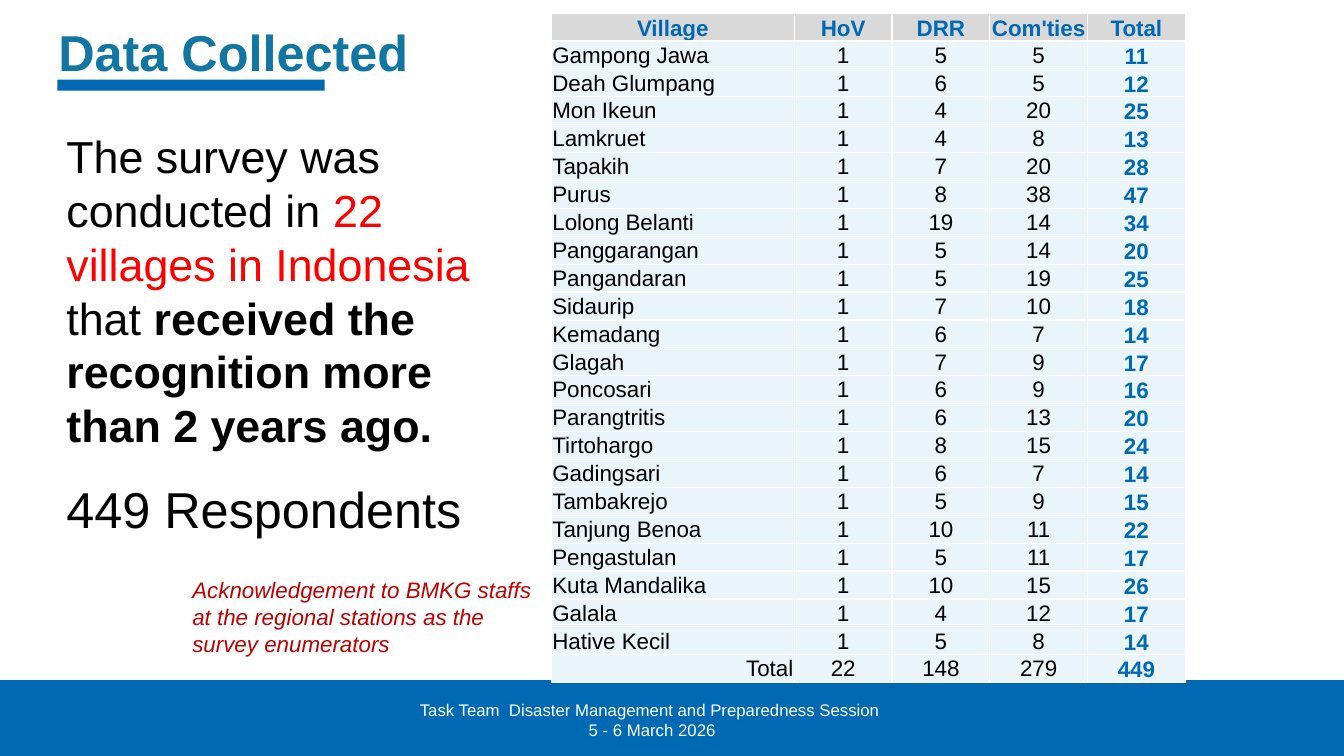
from dataclasses import dataclass

from lxml import etree
from pptx import Presentation
from pptx.dml.color import RGBColor
from pptx.enum.shapes import MSO_SHAPE
from pptx.enum.text import MSO_ANCHOR, MSO_AUTO_SIZE, PP_ALIGN
from pptx.oxml.ns import qn
from pptx.util import Inches, Pt

RECTANGLE = MSO_SHAPE.RECTANGLE
TOP, MIDDLE, BOTTOM = MSO_ANCHOR.TOP, MSO_ANCHOR.MIDDLE, MSO_ANCHOR.BOTTOM
LEFT, CENTER, RIGHT = PP_ALIGN.LEFT, PP_ALIGN.CENTER, PP_ALIGN.RIGHT
GROW, FIXED = MSO_AUTO_SIZE.SHAPE_TO_FIT_TEXT, MSO_AUTO_SIZE.NONE

FONT = "Arial"
COLORS = {
    "blue": "0069B4",
    "title": "1276A3",
    "red": "FF0000",
    "dark red": "C00000",
    "black": "000000",
    "white": "FFFFFF",
    "header": "D9D9D9",
    "body": "E9F4FB",
}
GRID_COLUMNS, GRID_ROWS = 160, 90
UNIT = Inches(1) / 12

HEADERS = ("Village", "HoV", "DRR", "Com'ties", "Total")
VILLAGES = (
    ("Gampong Jawa", 1, 5, 5),
    ("Deah Glumpang", 1, 6, 5),
    ("Mon Ikeun", 1, 4, 20),
    ("Lamkruet", 1, 4, 8),
    ("Tapakih", 1, 7, 20),
    ("Purus", 1, 8, 38),
    ("Lolong Belanti", 1, 19, 14),
    ("Panggarangan", 1, 5, 14),
    ("Pangandaran", 1, 5, 19),
    ("Sidaurip", 1, 7, 10),
    ("Kemadang", 1, 6, 7),
    ("Glagah", 1, 7, 9),
    ("Poncosari", 1, 6, 9),
    ("Parangtritis", 1, 6, 13),
    ("Tirtohargo", 1, 8, 15),
    ("Gadingsari", 1, 6, 7),
    ("Tambakrejo", 1, 5, 9),
    ("Tanjung Benoa", 1, 10, 11),
    ("Pengastulan", 1, 5, 11),
    ("Kuta Mandalika", 1, 10, 15),
    ("Galala", 1, 4, 12),
    ("Hative Kecil", 1, 5, 8),
)


@dataclass
class Box:
    left: float
    top: float
    width: float
    height: float

    def inner(self, left, top, width, height):
        return Box(self.left + left, self.top + top, width, height)

    def emu(self):
        return [round(side * UNIT) for side in (self.left, self.top, self.width, self.height)]


def color(name):
    return RGBColor.from_string(COLORS[name])


def style(font, size, tint, bold=False, italic=False):
    font.name = FONT
    font.size = Pt(size)
    font.color.rgb = color(tint)
    font.bold = bold
    font.italic = italic


def add_bar(page, box, outlined=False):
    bar = page.shapes.add_shape(RECTANGLE, *box.emu())
    bar.shadow.inherit = False
    bar.fill.solid()
    bar.fill.fore_color.rgb = color("blue")
    if outlined:
        bar.line.color.rgb = color("blue")
        bar.line.width = Pt(2)
    else:
        bar.line.fill.background()


def add_frame(page, box, anchor=TOP, wrap=True, sizing=GROW):
    frame = page.shapes.add_textbox(*box.emu()).text_frame
    frame.word_wrap = wrap
    frame.auto_size = sizing
    frame.vertical_anchor = anchor
    return frame


def write(para, text, size, tint, align=LEFT, bold=False, italic=False):
    para.text = text
    para.alignment = align
    style(para.font, size, tint, bold, italic)


def add_footer(page, box):
    add_bar(page, box, outlined=True)
    frame = add_frame(page, box.inner(37.56, 1.56, 80.16, 6))
    write(frame.paragraphs[0], "Task Team  Disaster Management and Preparedness Session ", 12, "white", CENTER)
    write(frame.add_paragraph(), "5 - 6 March 2026", 12, "white", CENTER)


def add_heading(page, box):
    add_bar(page, box.inner(1.08, 7.92, 31.8, 1.32))
    frame = add_frame(page, box, MIDDLE, sizing=FIXED)
    write(frame.paragraphs[0], "Data Collected", 36, "title", bold=True)


def add_summary(page, box):
    para = add_frame(page, box.inner(0, 0, 52.56, 39.96)).paragraphs[0]
    for text, tint, bold in (
        ("The survey was conducted in ", "black", False),
        ("22 villages in Indonesia ", "red", False),
        ("that ", "black", False),
        ("received the recognition more than 2 years ago.", "black", True),
    ):
        span = para.add_run()
        span.text = text
        style(span.font, 32, tint, bold)

    respondents = add_frame(page, box.inner(0, 41.52, 49.92, 8.52), wrap=False)
    write(respondents.paragraphs[0], "449 Respondents", 36, "black")

    thanks = add_frame(page, box.inner(15, 53.28, 45.12, 10.92))
    write(
        thanks.paragraphs[0],
        "Acknowledgement to BMKG staffs at the regional stations as the survey enumerators",
        16, "dark red", italic=True,
    )


def add_borders(cell):
    properties = cell._tc.get_or_add_tcPr()
    for side in ("a:lnL", "a:lnR", "a:lnT", "a:lnB"):
        line = etree.SubElement(properties, qn(side), w=str(Pt(1)))
        fill = etree.SubElement(line, qn("a:solidFill"))
        etree.SubElement(fill, qn("a:srgbClr"), val=COLORS["white"])


def fill_cell(cell, text, fill, tint, align, anchor, bold):
    add_borders(cell)
    cell.fill.solid()
    cell.fill.fore_color.rgb = color(fill)
    cell.margin_left = cell.margin_right = cell.margin_top = Inches(0.01)
    cell.margin_bottom = 0
    cell.vertical_anchor = anchor
    write(cell.text_frame.paragraphs[0], text, 16, tint, align, bold)


def add_village_table(page, box):
    sums = [sum(counts) for counts in list(zip(*VILLAGES))[1:]]
    body = [(*row, sum(row[1:])) for row in (*VILLAGES, ("Total", *sums))]
    rows = [HEADERS, *body]
    table = page.shapes.add_table(len(rows), len(HEADERS), *box.emu()).table
    table.first_row = table.horz_banding = False

    village_width = 28.92
    count_width = (box.width - village_width) / (len(HEADERS) - 1)
    for index, column in enumerate(table.columns):
        column.width = round((count_width if index else village_width) * UNIT)
    for row in table.rows:
        row.height = round(box.height / len(rows) * UNIT)

    last_row, last_column = len(rows) - 1, len(HEADERS) - 1
    for r, values in enumerate(rows):
        for c, value in enumerate(values):
            strong = r == 0 or c == last_column
            align = CENTER
            if c == 0 and r > 0:
                align = RIGHT if r == last_row else LEFT
            fill_cell(
                table.cell(r, c), str(value),
                "body" if r else "header",
                "blue" if strong else "black",
                align, BOTTOM if strong else MIDDLE, strong,
            )


def main():
    deck = Presentation()
    deck.slide_width = round(GRID_COLUMNS * UNIT)
    deck.slide_height = round(GRID_ROWS * UNIT)
    page = deck.slides.add_slide(deck.slide_layouts[6])
    add_footer(page, Box(0, 81.12, GRID_COLUMNS, 8.88))
    add_heading(page, Box(5.76, 1.56, 137.04, 9.12))
    add_village_table(page, Box(65.64, 1.56, 75.48, 78.72))
    add_summary(page, Box(6.72, 14.76, 60.12, 64.2))
    deck.save("out.pptx")


if __name__ == "__main__":
    main()
